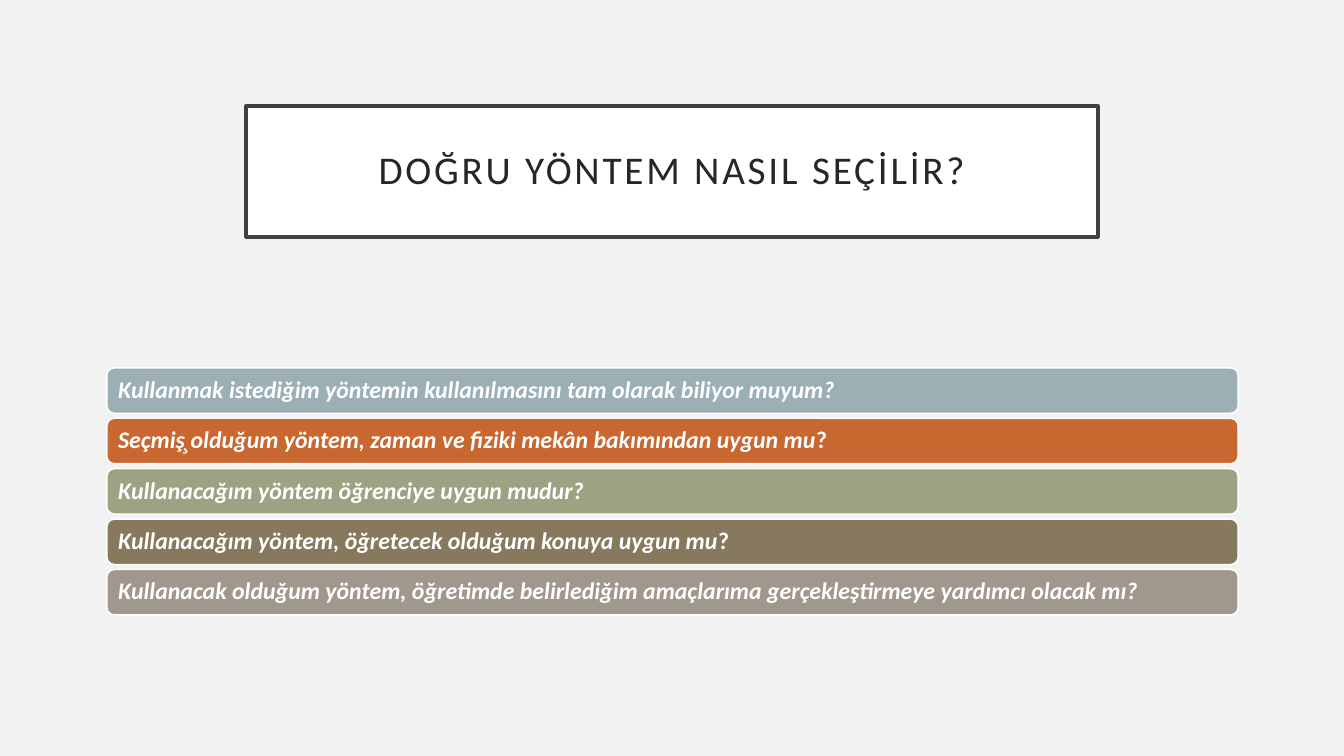
from pptx import Presentation
from pptx.dml.color import RGBColor
from pptx.enum.shapes import MSO_SHAPE
from pptx.enum.text import MSO_ANCHOR, MSO_AUTO_SIZE, PP_ALIGN
from pptx.util import Inches, Pt

ROUND = MSO_SHAPE.ROUNDED_RECTANGLE
MIDDLE = MSO_ANCHOR.MIDDLE
NO_FIT = MSO_AUTO_SIZE.NONE
LEFT, CENTER = PP_ALIGN.LEFT, PP_ALIGN.CENTER

FONT = "Calibri"
PAPER = RGBColor(0xF2, 0xF2, 0xF2)
WHITE = RGBColor(0xFF, 0xFF, 0xFF)
FRAME = RGBColor(0x40, 0x40, 0x40)
INK = RGBColor(0x26, 0x26, 0x26)
BLUE = RGBColor(0x9B, 0xAF, 0xB5)
ORANGE = RGBColor(0xC9, 0x67, 0x31)
GREEN = RGBColor(0x9C, 0xA3, 0x83)
BROWN = RGBColor(0x87, 0x79, 0x5D)
TAUPE = RGBColor(0xA0, 0x98, 0x8C)

WIDTH, HEIGHT = Inches(13.33), Inches(7.5)
TITLE_BOX = [Inches(n) for n in (2.44, 1.05, 8.45, 1.3)]
LIST_BOX = [Inches(n) for n in (1.06, 3.65, 11.22, 2.45)]
BAR_SHARE = 0.9  # part of each row that the bar fills

# Each question is a list of (text, bold, italic) runs.
QUESTIONS = [
    (BLUE, [("Kullanmak istediğim yöntemin kullanılmasını tam olarak "
             "biliyor muyum?", True, True)]),
    (ORANGE, [("Seçmiş", True, True), ("̧ ", False, False),
              ("olduğum yöntem, zaman ve fiziki mekân bakımından uygun mu",
               True, True), ("?", True, False)]),
    (GREEN, [("Kullanacağım yöntem öğrenciye uygun mudur?", True, True)]),
    (BROWN, [("Kullanacağım yöntem, öğretecek olduğum konuya uygun mu",
              True, True), ("?", True, False)]),
    (TAUPE, [("Kullanacak olduğum yöntem, öğretimde belirlediğim amaçlarıma "
              "gerçekleştirmeye yardımcı olacak mı?", True, True)]),
]


def paint(shape, fill, line, width):
    shape.fill.solid()
    shape.fill.fore_color.rgb = fill
    shape.line.color.rgb = line
    shape.line.width = Pt(width)


def set_frame(frame, side, edge, align):
    """Set margins, anchor and paragraph layout of a text frame."""
    frame.margin_left = frame.margin_right = Inches(side)
    frame.margin_top = frame.margin_bottom = Inches(edge)
    frame.vertical_anchor = MIDDLE
    frame.word_wrap = True
    frame.auto_size = NO_FIT
    para = frame.paragraphs[0]
    para.alignment = align
    para.line_spacing = 0.9
    return para


def style(run, size, color, bold=False, italic=False):
    font = run.font
    font.name, font.size = FONT, Pt(size)
    font.bold, font.italic = bold, italic
    font.color.rgb = color


def add_title(slide, box, text):
    title = slide.shapes.title
    title.left, title.top, title.width, title.height = box
    paint(title, WHITE, FRAME, 2.5)
    title.text_frame.text = text
    para = set_frame(title.text_frame, 0.2, 0.2, CENTER)
    run = para.runs[0]
    style(run, 28, INK)
    run.font._element.set("spc", "200")


def add_bar(slide, box, color, parts):
    bar = slide.shapes.add_shape(ROUND, *box)
    bar.shadow.inherit = False
    paint(bar, color, WHITE, 1)
    para = set_frame(bar.text_frame, 0.09, 0.07, LEFT)
    for text, bold, italic in parts:
        run = para.add_run()
        run.text = text
        style(run, 17, WHITE, bold, italic)


def add_list(slide, box, items):
    """Stack one bar per item, with equal gaps, in the box."""
    left, top, width, height = box
    pitch = height / (len(items) - 1 + BAR_SHARE)
    for row, (color, parts) in enumerate(items):
        place = left, int(top + row * pitch), width, int(pitch * BAR_SHARE)
        add_bar(slide, place, color, parts)


def main():
    deck = Presentation()
    deck.slide_width, deck.slide_height = WIDTH, HEIGHT
    slide = deck.slides.add_slide(deck.slide_layouts.get_by_name("Title Only"))
    slide.background.fill.solid()
    slide.background.fill.fore_color.rgb = PAPER
    add_title(slide, TITLE_BOX, "DOĞRU YÖNTEM NASIL SEÇİLİR?")
    add_list(slide, LIST_BOX, QUESTIONS)
    deck.save("out.pptx")


if __name__ == "__main__":
    main()
